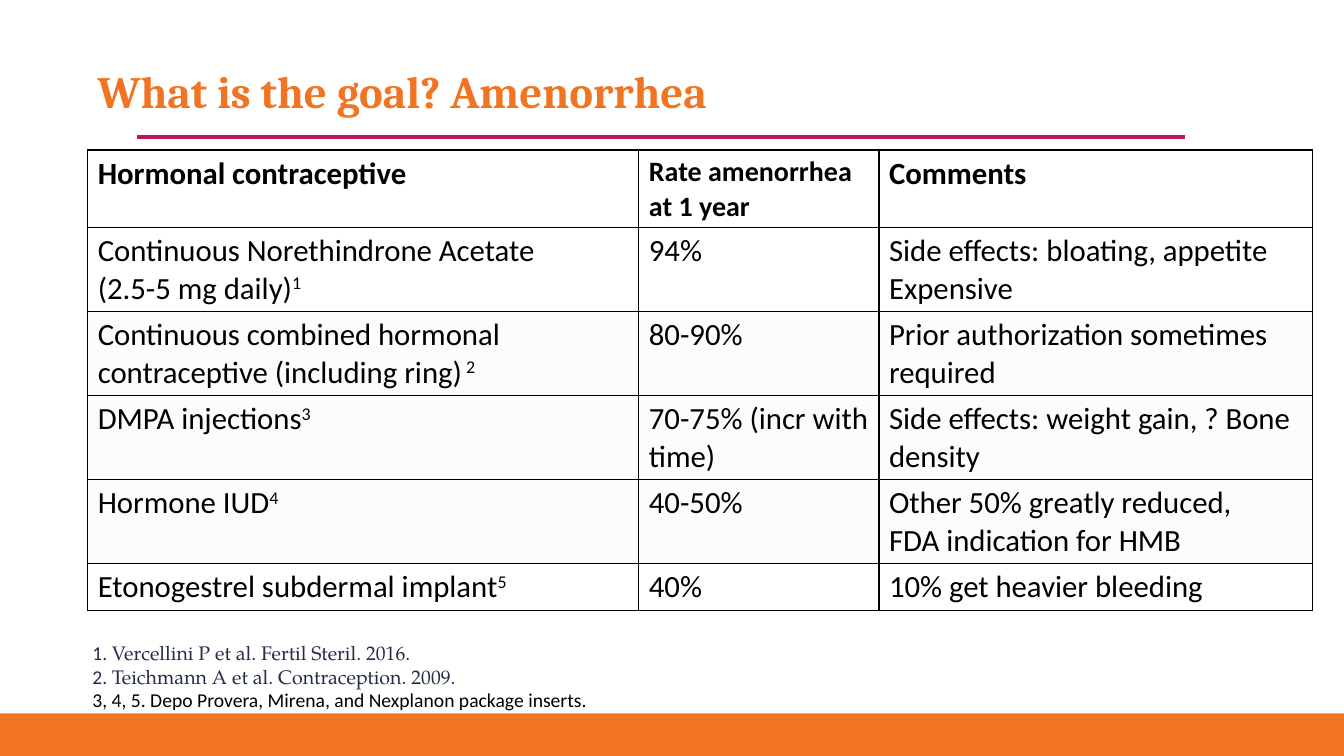
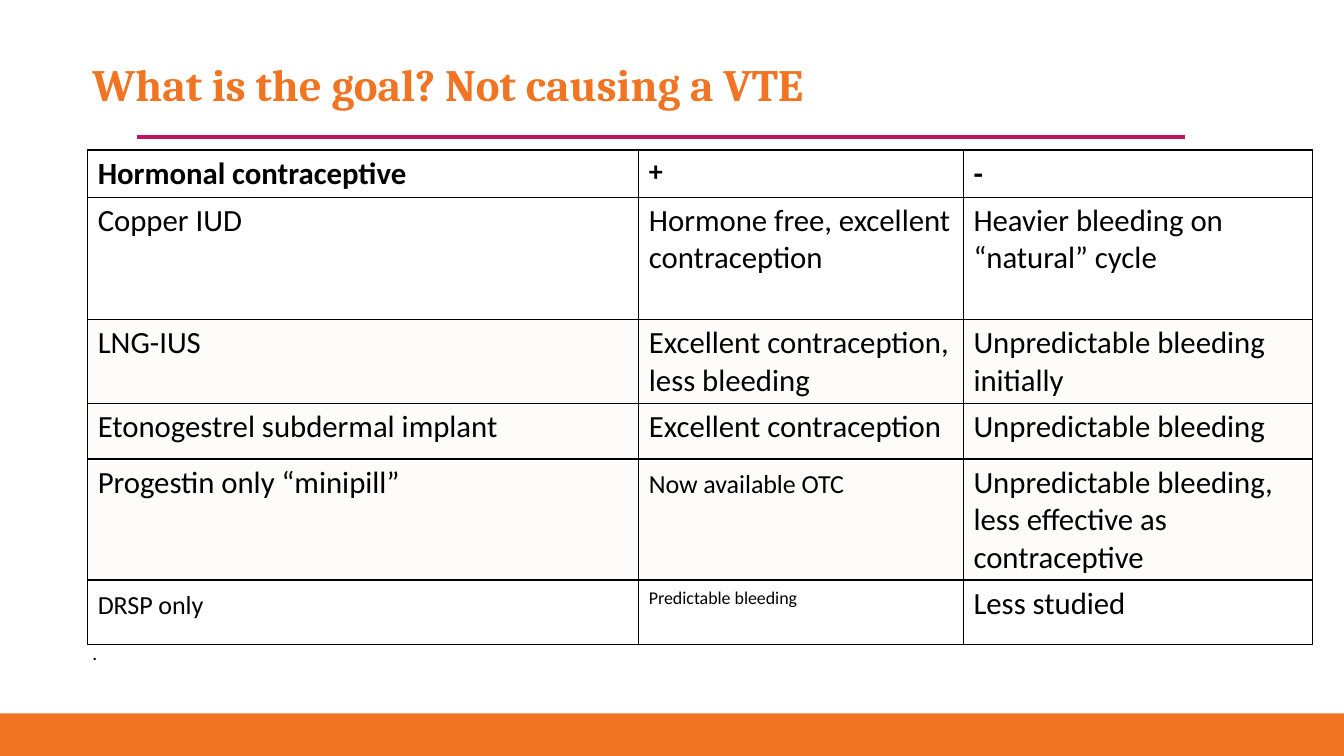
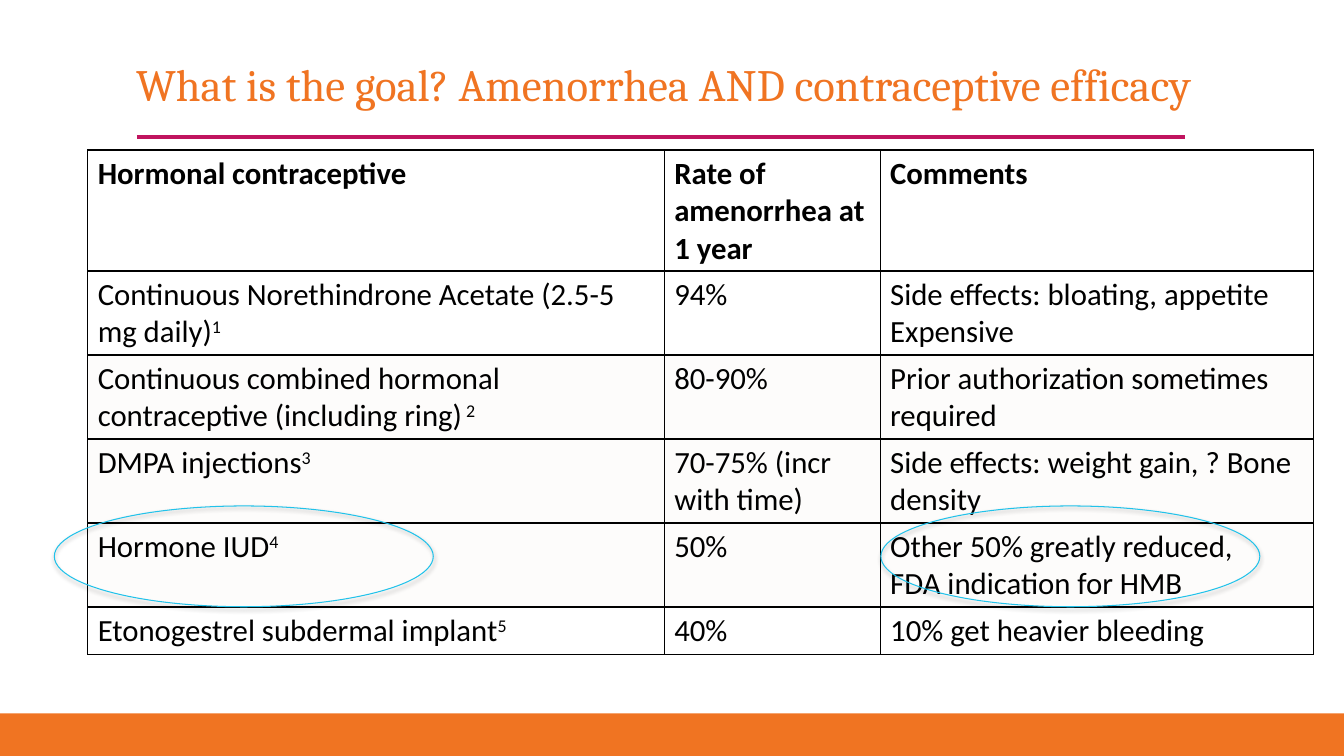
from lxml import etree
from pptx import Presentation
from pptx.dml.color import RGBColor
from pptx.enum import shapes, text
from pptx.oxml.ns import qn
from pptx.util import Cm, Pt

ORANGE = RGBColor(0xF0, 0x74, 0x22)
MAGENTA = RGBColor(0xC0, 0x14, 0x5F)
CYAN = RGBColor(0x21, 0xC2, 0xEA)
NAVY = RGBColor(0x23, 0x2D, 0x48)
BLACK = RGBColor(0, 0, 0)
TINT = RGBColor(0xFD, 0xFC, 0xFB)

TITLE_FONT, BODY_FONT, CITATION_FONT = "Cambria", "Calibri", "TeX Gyre Pagella"
BODY_SIZE = 22
TINTED_ROWS = (2, 3, 4)
ROW = 1.19
TABLE_LEFT, TABLE_TOP = 2.21, 3.78


def amenorrhea_rows(rate_heading, dose_break, iud_rate):
    return [
        ["Hormonal contraceptive", rate_heading, "Comments"],
        [f"Continuous Norethindrone Acetate{dose_break}(2.5-5 mg daily)^1", "94%",
         "Side effects: bloating, appetite\nExpensive"],
        ["Continuous combined hormonal contraceptive (including ring)^ 2", "80-90%",
         "Prior authorization sometimes required"],
        ["DMPA injections^3", "70-75% (incr with time)",
         "Side effects: weight gain, ? Bone density"],
        ["Hormone IUD^4", iud_rate, "Other 50% greatly reduced,\nFDA indication for HMB"],
        ["Etonogestrel subdermal implant^5", "40%", "10% get heavier bleeding"],
    ]


# In cells, "^" starts superscript; a pair gives the text and its own size.
VTE_ROWS = [
    ["Hormonal contraceptive", ("+", 20), "-"],
    ["Copper IUD", "Hormone free, excellent contraception", "Heavier bleeding on “natural” cycle"],
    ["LNG-IUS", "Excellent contraception, less bleeding", "Unpredictable bleeding initially"],
    ["Etonogestrel subdermal implant", "Excellent contraception", "Unpredictable bleeding"],
    ["Progestin only “minipill”", ("^Now available OTC", 32),
     "Unpredictable bleeding, less effective as contraceptive"],
    [("^DRSP only", 32), "^Predictable bleeding", "Less studied"],
]

SLIDES = [
    {
        "title": "What is the goal? Amenorrhea", "bold": True, "title_at": (2.21, 1.55),
        "rows": amenorrhea_rows(("Rate amenorrhea at 1 year", 20), "\n", "40-50%"),
        "columns": (13.89, 6.05, 10.92), "heights": [ROW] * 6,
        "notes": [
            [("1. ", BODY_FONT, NAVY),
             ("Vercellini P et al. Fertil Steril. 2016.", CITATION_FONT, NAVY)],
            [("2. ", BODY_FONT, NAVY),
             ("Teichmann A et al. Contraception. 2009.", CITATION_FONT, NAVY)],
            [("3, 4, 5. Depo Provera, Mirena, and Nexplanon package inserts.",
              BODY_FONT, BLACK)],
        ],
        "circles": [],
    },
    {
        "title": "What is the goal? Not causing a VTE", "bold": True, "title_at": (2.08, 1.37),
        "rows": VTE_ROWS,
        "columns": (13.89, 8.18, 8.79), "heights": [ROW, 3.08, ROW, 1.4, 2.59, 1.63],
        "notes": [[(".", BODY_FONT, BLACK)]],
        "circles": [],
    },
    {
        "title": "What is the goal? Amenorrhea AND contraceptive efficacy", "bold": False,
        "title_at": (3.18, 1.37),
        "rows": amenorrhea_rows("Rate of amenorrhea at 1 year", " ", "50%"),
        "columns": (14.53, 5.44, 10.92), "heights": [ROW] * 6,
        "notes": [],
        "circles": [1.37, 22.2],
    },
]


def add_band(page):
    band = page.shapes.add_shape(shapes.MSO_SHAPE.RECTANGLE,
                                 Cm(0), Cm(17.98), Cm(33.87), Cm(1.07))
    band.shadow.inherit = False
    band.fill.solid()
    band.fill.fore_color.rgb = ORANGE
    band.line.fill.background()


def add_title(page, title, bold, left, top):
    box = page.shapes.add_textbox(Cm(left), Cm(top), Cm(27.5), Cm(1.75))
    box.text_frame.word_wrap = True
    box.text_frame.vertical_anchor = text.MSO_ANCHOR.MIDDLE
    para = box.text_frame.paragraphs[0]
    para.text = title
    para.line_spacing = Pt(30)
    para.font.name, para.font.size, para.font.bold = TITLE_FONT, Pt(32), bold
    para.font.color.rgb = ORANGE


def add_rule(page):
    rule = page.shapes.add_connector(shapes.MSO_CONNECTOR.STRAIGHT,
                                     Cm(3.45), Cm(3.45), Cm(29.87), Cm(3.45))
    rule.line.color.rgb = MAGENTA
    rule.line.width = Pt(3)
    etree.SubElement(rule.element.spPr, qn("a:effectLst"))


def add_borders(cell):
    properties = cell._tc.get_or_add_tcPr()
    for side in ("a:lnL", "a:lnR", "a:lnT", "a:lnB"):
        border = etree.SubElement(properties, qn(side), w=str(Pt(1)))
        fill = etree.SubElement(border, qn("a:solidFill"))
        etree.SubElement(fill, qn("a:srgbClr"), val=str(BLACK))


def fill_cell(cell, content, bold, tinted):
    words, size = content if isinstance(content, tuple) else (content, BODY_SIZE)
    add_borders(cell)
    if tinted:
        cell.fill.solid()
        cell.fill.fore_color.rgb = TINT
    else:
        cell.fill.background()
    for number, line in enumerate(words.split("\n")):
        frame = cell.text_frame
        para = frame.add_paragraph() if number else frame.paragraphs[0]
        para.font.name, para.font.size, para.font.bold = BODY_FONT, Pt(size), bold
        para.font.color.rgb = BLACK
        normal, _, raised = line.partition("^")
        for part, baseline in ((normal, 0), (raised, 30000)):
            if part:
                span = para.add_run()
                span.text = part
                span._r.get_or_add_rPr().set("baseline", str(baseline))


def add_grid(page, rows, columns, heights):
    table = page.shapes.add_table(len(rows), len(columns), Cm(TABLE_LEFT), Cm(TABLE_TOP),
                                  Cm(sum(columns)), Cm(sum(heights))).table
    table.first_row = table.horz_banding = False
    for column, width in zip(table.columns, columns):
        column.width = Cm(width)
    for index, (row, height) in enumerate(zip(table.rows, heights)):
        row.height = Cm(height)
        for cell, content in zip(row.cells, rows[index]):
            fill_cell(cell, content, index == 0, index in TINTED_ROWS)


def add_notes(page, notes):
    box = page.shapes.add_textbox(Cm(2.08), Cm(16.03), Cm(24.03), Cm(0.69 * len(notes)))
    frame = box.text_frame
    frame.word_wrap = True
    for number, spans in enumerate(notes):
        para = frame.add_paragraph() if number else frame.paragraphs[0]
        para.font.size = Pt(14)
        for words, font, color in spans:
            span = para.add_run()
            span.text = words
            span.font.name = font
            span.font.color.rgb = color


def add_circle(page, left):
    """Ring a table cell with a thin ellipse that casts a soft shadow."""
    circle = page.shapes.add_shape(shapes.MSO_SHAPE.OVAL,
                                   Cm(left), Cm(12.75), Cm(9.55), Cm(2.54))
    circle.fill.background()
    circle.line.color.rgb = CYAN
    circle.line.width = Pt(0.75)
    circle.shadow.inherit = False
    effects = circle.element.spPr.find(qn("a:effectLst"))
    shadow = etree.SubElement(effects, qn("a:outerShdw"), blurRad=str(Pt(3.1)),
                              dist=str(Pt(1.8)), dir="5400000", rotWithShape="0")
    color = etree.SubElement(shadow, qn("a:srgbClr"), val=str(BLACK))
    etree.SubElement(color, qn("a:alpha"), val="35000")


def main():
    deck = Presentation()
    deck.slide_width, deck.slide_height = Cm(33.87), Cm(19.05)
    for content in SLIDES:
        page = deck.slides.add_slide(deck.slide_layouts[6])
        add_band(page)
        add_title(page, content["title"], content["bold"], *content["title_at"])
        add_rule(page)
        add_grid(page, content["rows"], content["columns"], content["heights"])
        if content["notes"]:
            add_notes(page, content["notes"])
        for left in content["circles"]:
            add_circle(page, left)
    deck.save("out.pptx")


if __name__ == "__main__":
    main()
